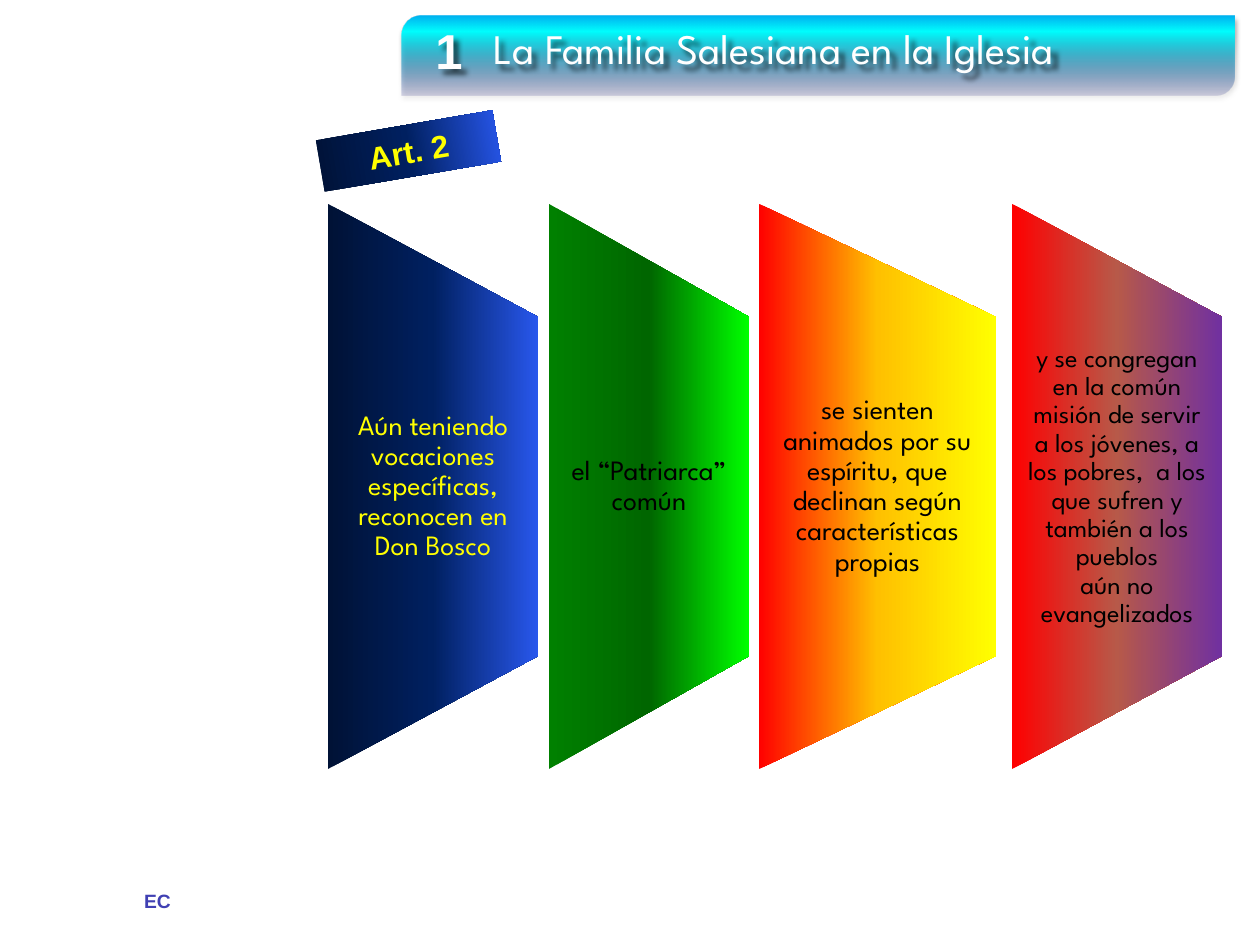
"""Build the slide on article 2: the Salesian Family in the Church."""
from dataclasses import dataclass

from lxml import etree
from pptx import Presentation
from pptx import util as u
from pptx.dml import color
from pptx.enum import shapes, text
from pptx.oxml import ns
from pptx.shapes import autoshape as auto

PX = 914400 / 126


@dataclass(frozen=True)
class Stop:
    at: int
    rgb: str
    alpha: int = 100


@dataclass(frozen=True)
class Theme:
    body_font: str = "League Spartan"
    label_font: str = "Arial"
    title_pt: int = 24
    number_pt: int = 28
    article_pt: int = 18
    footer_pt: int = 11
    white: str = "FFFFFF"
    black: str = "000000"
    yellow: str = "FFFF00"
    footer: str = "4040B3"
    number_fill: str = "FEFEFE"
    number_line: str = "202086"
    banner: tuple[Stop, ...] = (Stop(0, "00B0F0"), Stop(20, "00FFFF"), Stop(100, "1B1B7E", 16))
    blue: tuple[Stop, ...] = (Stop(0, "001236"), Stop(50, "002060"), Stop(100, "2857EC"))
    green: tuple[Stop, ...] = (Stop(0, "008000"), Stop(50, "006600"), Stop(100, "00FF00"))
    sunset: tuple[Stop, ...] = (Stop(0, "FF0000"), Stop(50, "FFC000"), Stop(100, "FFFF00"))
    violet: tuple[Stop, ...] = (Stop(0, "FF0000"), Stop(50, "B75949"), Stop(100, "7030A0"))


THEME = Theme()


@dataclass(frozen=True)
class Style:
    font: str
    size: int
    rgb: str
    bold: bool = False


@dataclass(frozen=True)
class Panel:
    left: int
    width: int
    stops: tuple[Stop, ...]
    style: Style
    lines: tuple[str, ...]


PANEL_TOP, PANEL_HEIGHT, PANEL_SLOPE, PANEL_MARGIN = 204, 565, 113, 14
DARK_BODY = Style(THEME.body_font, 16, THEME.black)
PANELS = (
    Panel(328, 210, THEME.blue, Style(THEME.body_font, 16, THEME.yellow),
          ("Aún teniendo vocaciones específicas, reconocen en Don Bosco",)),
    Panel(549, 200, THEME.green, DARK_BODY, ("el “Patriarca” común",)),
    Panel(759, 237, THEME.sunset, DARK_BODY,
          ("se sienten animados por su espíritu, que declinan según características propias",)),
    Panel(1012, 210, THEME.violet, Style(THEME.body_font, 15, THEME.black),
          ("y se congregan",
           "en la común misión de servir a los jóvenes, a los pobres,  a los que sufren "
           "y también a los pueblos",
           "aún no evangelizados")),
)


def px(length: int) -> u.Emu:
    """Turn pixels into EMU."""
    return u.Emu(round(length * PX))


def add_colour(parent: etree._Element, rgb: str, alpha: int) -> None:
    """Append an RGB colour with an opacity in percent."""
    value = etree.SubElement(parent, ns.qn("a:srgbClr"), val=rgb)
    if alpha < 100:
        etree.SubElement(value, ns.qn("a:alpha"), val=str(alpha * 1000))


def paint(shape: auto.Shape, stops: tuple[Stop, ...], angle: int = 0) -> None:
    """Fill a shape with a linear gradient and remove its line and shadow."""
    shape.shadow.inherit = False
    shape.line.fill.background()
    shape.fill.gradient()
    shape.fill.gradient_angle = angle
    stop_list = shape._element.spPr.find(".//" + ns.qn("a:gsLst"))
    for old in list(stop_list):
        stop_list.remove(old)
    for stop in stops:
        entry = etree.SubElement(stop_list, ns.qn("a:gs"), pos=str(stop.at * 1000))
        add_colour(entry, stop.rgb, stop.alpha)


def cast_shadow(shape: auto.Shape, blur: float, distance: float, angle: int, alpha: int) -> None:
    """Give a shape a soft black outer shadow, with lengths in points."""
    shape.shadow.inherit = False
    effects = shape._element.spPr.find(ns.qn("a:effectLst"))
    shadow = etree.SubElement(
        effects, ns.qn("a:outerShdw"), blurRad=str(u.Pt(blur)), dist=str(u.Pt(distance)),
        dir=str(angle * 60000), algn="ctr", rotWithShape="0")
    add_colour(shadow, THEME.black, alpha)


def write(shape: auto.Shape, lines: tuple[str, ...], style: Style, wrap: bool = True,
          align: text.PP_ALIGN = text.PP_ALIGN.CENTER, spacing: float = 1.0) -> None:
    """Write one run per paragraph into a shape."""
    frame = shape.text_frame
    frame.word_wrap = wrap
    for index, line in enumerate(lines):
        paragraph = frame.paragraphs[0] if index == 0 else frame.add_paragraph()
        paragraph.alignment = align
        paragraph.line_spacing = spacing
        run = paragraph.add_run()
        run.text = line
        run.font.name = style.font
        run.font.size = u.Pt(style.size)
        run.font.bold = style.bold
        run.font.color.rgb = color.RGBColor.from_string(style.rgb)


def draw_panel(slide_shapes, panel: Panel) -> None:
    """Draw a panel that narrows to the right, with its text."""
    right, bottom = panel.left + panel.width, PANEL_TOP + PANEL_HEIGHT
    outline = slide_shapes.build_freeform(panel.left, bottom, scale=PX)
    outline.add_line_segments([(panel.left, PANEL_TOP), (right, PANEL_TOP + PANEL_SLOPE),
                               (right, bottom - PANEL_SLOPE)])
    shape = outline.convert_to_shape()
    paint(shape, panel.stops)
    frame = shape.text_frame
    frame.vertical_anchor = text.MSO_ANCHOR.MIDDLE
    frame.margin_left = frame.margin_right = px(PANEL_MARGIN)
    frame.margin_top = frame.margin_bottom = px(PANEL_SLOPE)
    write(shape, panel.lines, panel.style, spacing=0.9)


def draw_header(slide_shapes) -> None:
    """Draw the banner with its number and title."""
    header = slide_shapes.add_group_shape().shapes
    banner = header.add_shape(shapes.MSO_SHAPE.ROUND_2_DIAG_RECTANGLE,
                              px(402), px(16), px(833), px(79))
    banner.adjustments[0] = 0.25
    paint(banner, THEME.banner, 270)
    cast_shadow(banner, 3.1, 1.8, 90, 35)

    number = header.add_textbox(px(422), px(14), px(54), px(72))
    write(number, ("1",), Style(THEME.label_font, THEME.number_pt, THEME.number_fill, True), False)
    properties = number.text_frame.paragraphs[0].runs[0].font._element
    properties.set("spc", "50")
    line = etree.Element(ns.qn("a:ln"), w=str(u.Pt(1)))
    add_colour(etree.SubElement(line, ns.qn("a:solidFill")), THEME.number_line, 100)
    properties.insert(0, line)

    title = header.add_textbox(px(481), px(16), px(735), px(63))
    write(title, ("La Familia Salesiana en la Iglesia",),
          Style(THEME.body_font, THEME.title_pt, THEME.white), align=text.PP_ALIGN.LEFT)
    for label in (number, title):
        cast_shadow(label, 3, 4, 45, 60)


def main() -> None:
    """Build and save the slide."""
    deck = Presentation()
    deck.slide_width, deck.slide_height = px(1260), px(945)
    slide_shapes = deck.slides.add_slide(deck.slide_layouts[6]).shapes

    footer = slide_shapes.add_textbox(px(131), px(883), px(53), px(36))
    write(footer, ("EC",), Style(THEME.label_font, THEME.footer_pt, THEME.footer, True), False)
    draw_header(slide_shapes)
    for panel in PANELS:
        draw_panel(slide_shapes, panel)

    article = slide_shapes.add_shape(shapes.MSO_SHAPE.RECTANGLE, px(319), px(125), px(179), px(52))
    article.rotation = -9.7
    paint(article, THEME.blue)
    article.text_frame.vertical_anchor = text.MSO_ANCHOR.MIDDLE
    write(article, ("Art. 2",), Style(THEME.label_font, THEME.article_pt, THEME.yellow, True))
    deck.save("out.pptx")


if __name__ == "__main__":
    main()
